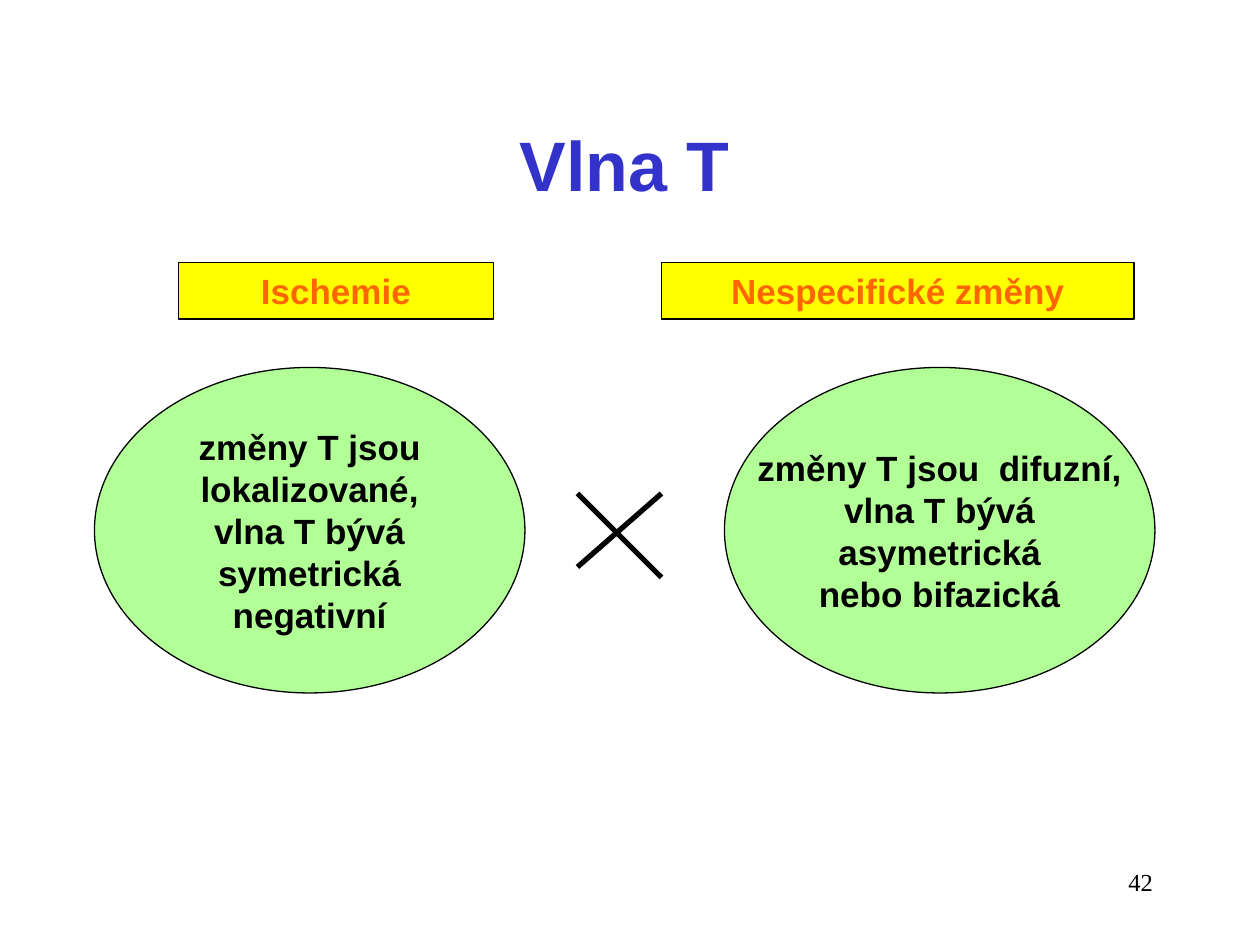
from dataclasses import dataclass

from lxml import etree
from pptx import Presentation
from pptx.dml.color import RGBColor
from pptx.enum.shapes import MSO_CONNECTOR, MSO_SHAPE
from pptx.enum.text import MSO_ANCHOR, MSO_AUTO_SIZE, PP_ALIGN
from pptx.oxml.ns import qn
from pptx.util import Inches, Pt

OVAL, RECTANGLE = MSO_SHAPE.OVAL, MSO_SHAPE.RECTANGLE
STRAIGHT = MSO_CONNECTOR.STRAIGHT
TOP, MIDDLE = MSO_ANCHOR.TOP, MSO_ANCHOR.MIDDLE
CENTER, RIGHT = PP_ALIGN.CENTER, PP_ALIGN.RIGHT
NO_AUTOFIT = MSO_AUTO_SIZE.NONE


@dataclass(frozen=True)
class Theme:
    heading_font: str = "Arial"
    number_font: str = "Times New Roman"
    title_size: int = 40
    body_size: int = 20
    number_size: int = 14
    title: str = "3333CC"
    label: str = "FF6600"
    label_fill: str = "FFFF00"
    oval_fill: str = "66FF33"
    oval_opacity: int = 50
    ink: str = "000000"


THEME = Theme()
COLUMNS, ROWS = 120, 90

# Boxes are (column, row, columns wide, rows high).
TITLE = ("Vlna T", (36, 11, 47, 9.2))
PAGE_NUMBER = ("42", (86, 82, 25, 6))
LABEL_ROW, LABEL_HEIGHT = 25, 5.4
OVAL_ROW, OVAL_WIDTH, OVAL_HEIGHT = 35, 41, 31
SIDES = [
    {
        "label": "Ischemie", "label_column": 17, "label_width": 30, "oval_column": 9,
        "findings": ["změny T jsou", "lokalizované,", "vlna T bývá",
                     "symetrická", "negativní"],
    },
    {
        "label": "Nespecifické změny", "label_column": 63, "label_width": 45, "oval_column": 69,
        "findings": ["změny T jsou  difuzní,", "vlna T bývá",
                     "asymetrická", "nebo bifazická"],
    },
]
CROSS = [((55, 47), (63, 55)), ((55, 54), (63, 47))]

presentation = Presentation()
presentation.slide_width, presentation.slide_height = Inches(10), Inches(7.5)
slide = presentation.slides.add_slide(presentation.slide_layouts[5])


def grid(column, row):
    return (round(column * presentation.slide_width / COLUMNS),
            round(row * presentation.slide_height / ROWS))


def box(column, row, width, height):
    return grid(column, row) + grid(width, height)


def write(shape, lines, size, color, font=THEME.heading_font, bold=True,
          align=CENTER, anchor=MIDDLE, wrap=True):
    frame = shape.text_frame
    frame.auto_size = NO_AUTOFIT
    frame.word_wrap = wrap
    frame.vertical_anchor = anchor
    for index, line in enumerate(lines):
        paragraph = frame.add_paragraph() if index else frame.paragraphs[0]
        paragraph.alignment = align
        run = paragraph.add_run()
        run.text = line
        run.font.name, run.font.size, run.font.bold = font, Pt(size), bold
        run.font.color.rgb = RGBColor.from_string(color)


def add_filled(kind, place, fill, line_width):
    shape = slide.shapes.add_shape(kind, *box(*place))
    shape.shadow.inherit = False
    shape.fill.solid()
    shape.fill.fore_color.rgb = RGBColor.from_string(fill)
    shape.line.color.rgb = RGBColor.from_string(THEME.ink)
    shape.line.width = Pt(line_width)
    return shape


def set_opacity(shape, percent):
    color = shape.fill._xPr.find(qn("a:solidFill"))[0]
    etree.SubElement(color, qn("a:alpha"), val=str(percent * 1000))


title_text, title_place = TITLE
title = slide.shapes.title
title.left, title.top, title.width, title.height = box(*title_place)
write(title, [title_text], THEME.title_size, THEME.title, wrap=False)

for side in SIDES:
    oval = add_filled(OVAL, (side["oval_column"], OVAL_ROW, OVAL_WIDTH, OVAL_HEIGHT),
                      THEME.oval_fill, 0.75)
    set_opacity(oval, THEME.oval_opacity)
    write(oval, side["findings"], THEME.body_size, THEME.ink, wrap=False)

    label = add_filled(RECTANGLE,
                       (side["label_column"], LABEL_ROW, side["label_width"], LABEL_HEIGHT),
                       THEME.label_fill, 1)
    write(label, [side["label"]], THEME.body_size, THEME.label)

for start, end in CROSS:
    stroke = slide.shapes.add_connector(STRAIGHT, *grid(*start), *grid(*end))
    stroke.line.color.rgb = RGBColor.from_string(THEME.ink)
    stroke.line.width = Pt(3)
    etree.SubElement(stroke._element.spPr, qn("a:effectLst"))

number_text, number_place = PAGE_NUMBER
number = slide.shapes.add_textbox(*box(*number_place))
write(number, [number_text], THEME.number_size, THEME.ink, font=THEME.number_font,
      bold=False, align=RIGHT, anchor=TOP)

presentation.save("out.pptx")
